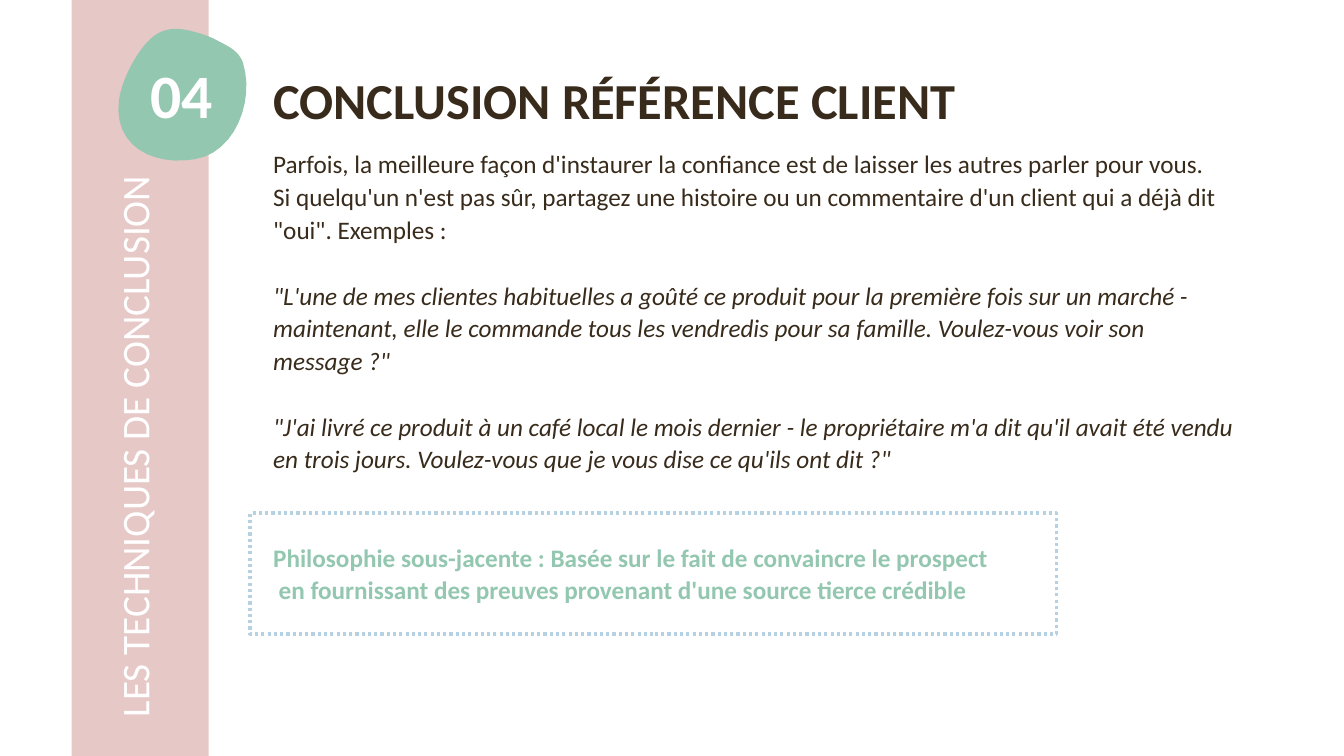
"""Build the slide on closing a sale with a client reference."""
from dataclasses import dataclass

from lxml.etree import SubElement
from pptx import Presentation
from pptx.dml.color import RGBColor
from pptx.enum.dml import MSO_LINE
from pptx.enum.shapes import MSO_SHAPE
from pptx.enum.text import MSO_ANCHOR, MSO_AUTO_SIZE, PP_ALIGN
from pptx.oxml.ns import qn
from pptx.util import Pt

BROWN = RGBColor(0x38, 0x2B, 0x1B)
GREEN = RGBColor(0x94, 0xC7, 0xB0)
PINK = RGBColor(0xE6, 0xC8, 0xC7)
BLUE = RGBColor(0xB6, 0xD1, 0xE1)
WHITE = RGBColor(0xFF, 0xFF, 0xFF)
FONT = "Calibri"
LINE_HEIGHT = 23.4
CURVE_STEPS = 12


@dataclass(frozen=True)
class Line:
    text: str
    size: float = 18
    color: RGBColor = BROWN
    bold: bool = False
    italic: bool = False
    spacing: object = Pt(LINE_HEIGHT)
    blank_lines: int = 0
    indent: float = 0
    align: PP_ALIGN = PP_ALIGN.LEFT


TITLE = Line("CONCLUSION RÉFÉRENCE CLIENT", 36, bold=True, spacing=0.9)
NUMBER = Line("04", 44, WHITE, bold=True, align=PP_ALIGN.CENTER)
SECTION = Line("LES TECHNIQUES DE CONCLUSION", 28, WHITE, spacing=0.9)
BODY = [
    Line("Parfois, la meilleure façon d'instaurer la confiance est de laisser "
         "les autres parler pour vous."),
    Line("Si quelqu'un n'est pas sûr, partagez une histoire ou un commentaire "
         "d'un client qui a déjà dit \"oui\". Exemples :"),
    Line("\"L'une de mes clientes habituelles a goûté ce produit pour la première "
         "fois sur un marché - maintenant, elle le commande tous les vendredis "
         "pour sa famille. Voulez-vous voir son message ?\"",
         italic=True, blank_lines=1),
    Line("\"J'ai livré ce produit à un café local le mois dernier - le propriétaire "
         "m'a dit qu'il avait été vendu en trois jours. Voulez-vous que je vous "
         "dise ce qu'ils ont dit ?\"", italic=True, blank_lines=1),
    Line("Philosophie sous-jacente : Basée sur le fait de convaincre le prospect",
         color=GREEN, bold=True, blank_lines=2),
    Line("en fournissant des preuves provenant d'une source tierce crédible",
         color=GREEN, bold=True, indent=4),
]

BLOB_START = (139.7, 23)
BLOB_CURVES = [
    ((127.4, 19.4), (115.2, 18.7), (105.1, 30.2)),
    ((95.8, 40.3), (87.1, 57.6), (85, 71.3)),
    ((80.6, 104.4), (109.4, 118.8), (139, 113.8)),
    ((167.8, 109.4), (182.2, 72), (173.5, 44.6)),
    ((170.6, 36.7), (163.4, 33.1), (156.2, 29.5)),
    ((151.2, 26.6), (145.4, 24.5), BLOB_START),
]


def place(shape, left: float, top: float, width: float, height: float) -> None:
    """Move and size a shape, in points."""
    shape.left, shape.top = Pt(left), Pt(top)
    shape.width, shape.height = Pt(width), Pt(height)


def write(shape, lines: list[Line], anchor=MSO_ANCHOR.TOP) -> None:
    """Fill a shape with formatted paragraphs."""
    frame = shape.text_frame
    frame.text = "\n".join(line.text for line in lines)
    frame.word_wrap = True
    frame.auto_size = MSO_AUTO_SIZE.NONE
    frame.vertical_anchor = anchor
    for para, line in zip(frame.paragraphs, lines):
        properties = para._p.get_or_add_pPr()
        properties.set("marL", str(Pt(line.indent)))
        properties.set("indent", "0")
        SubElement(properties, qn("a:buNone"))
        para.alignment = line.align
        para.line_spacing = line.spacing
        para.space_before = Pt(line.blank_lines * LINE_HEIGHT)
        para.space_after = Pt(0)
        for span in para.runs:
            font = span.font
            font.name, font.size = FONT, Pt(line.size)
            font.bold, font.italic = line.bold, line.italic
            font.color.rgb = line.color


def add_rectangle(page, left: float, top: float, width: float, height: float):
    """Add a rectangle without shadow."""
    rectangle = page.shapes.add_shape(
        MSO_SHAPE.RECTANGLE, Pt(left), Pt(top), Pt(width), Pt(height))
    rectangle.shadow.inherit = False
    return rectangle


def add_label(page, line: Line, left: float, top: float, width: float,
              height: float, rotation: float = 0) -> None:
    """Add a text box holding one line."""
    box = page.shapes.add_textbox(Pt(left), Pt(top), Pt(width), Pt(height))
    box.rotation = rotation
    write(box, [line])


def blob_points() -> list[tuple[int, int]]:
    """Sample the cubic curves of the number badge."""
    points, start = [], BLOB_START
    for first, second, end in BLOB_CURVES:
        for step in range(1, CURVE_STEPS + 1):
            t = step / CURVE_STEPS
            u = 1 - t
            points.append(tuple(
                Pt(u**3 * a + 3 * u * u * t * b + 3 * u * t * t * c + t**3 * d)
                for a, b, c, d in zip(start, first, second, end)))
        start = end
    return points


def add_badge(page) -> None:
    """Add the rounded green badge."""
    builder = page.shapes.build_freeform(Pt(BLOB_START[0]), Pt(BLOB_START[1]))
    builder.add_line_segments(blob_points(), close=True)
    badge = builder.convert_to_shape()
    badge.shadow.inherit = False
    badge.fill.solid()
    badge.fill.fore_color.rgb = GREEN
    badge.line.fill.background()


def main() -> None:
    """Compose and save the slide."""
    deck = Presentation()
    deck.slide_width, deck.slide_height = Pt(960), Pt(540)
    page = deck.slides.add_slide(deck.slide_layouts[1])

    title, body = page.shapes.title, page.placeholders[1]
    place(title, 187.9, 45.4, 626.4, 56.9)
    write(title, [TITLE], MSO_ANCHOR.MIDDLE)
    place(body, 187.9, 100.8, 722.2, 393.8)
    write(body, BODY)

    band = add_rectangle(page, 51.1, 0, 97.9, 540)
    band.fill.solid()
    band.fill.fore_color.rgb = PINK
    band.line.fill.background()

    frame = add_rectangle(page, 178.6, 366.5, 576, 86.4)
    frame.fill.background()
    frame.line.color.rgb = BLUE
    frame.line.width = Pt(2.25)
    frame.line.dash_style = MSO_LINE.ROUND_DOT

    add_badge(page)
    add_label(page, NUMBER, 84.2, 66.2, 90.7, 75.6)
    add_label(page, SECTION, -144.7, 211.7, 531.4, 84.2, rotation=270)

    deck.save("out.pptx")


if __name__ == "__main__":
    main()
